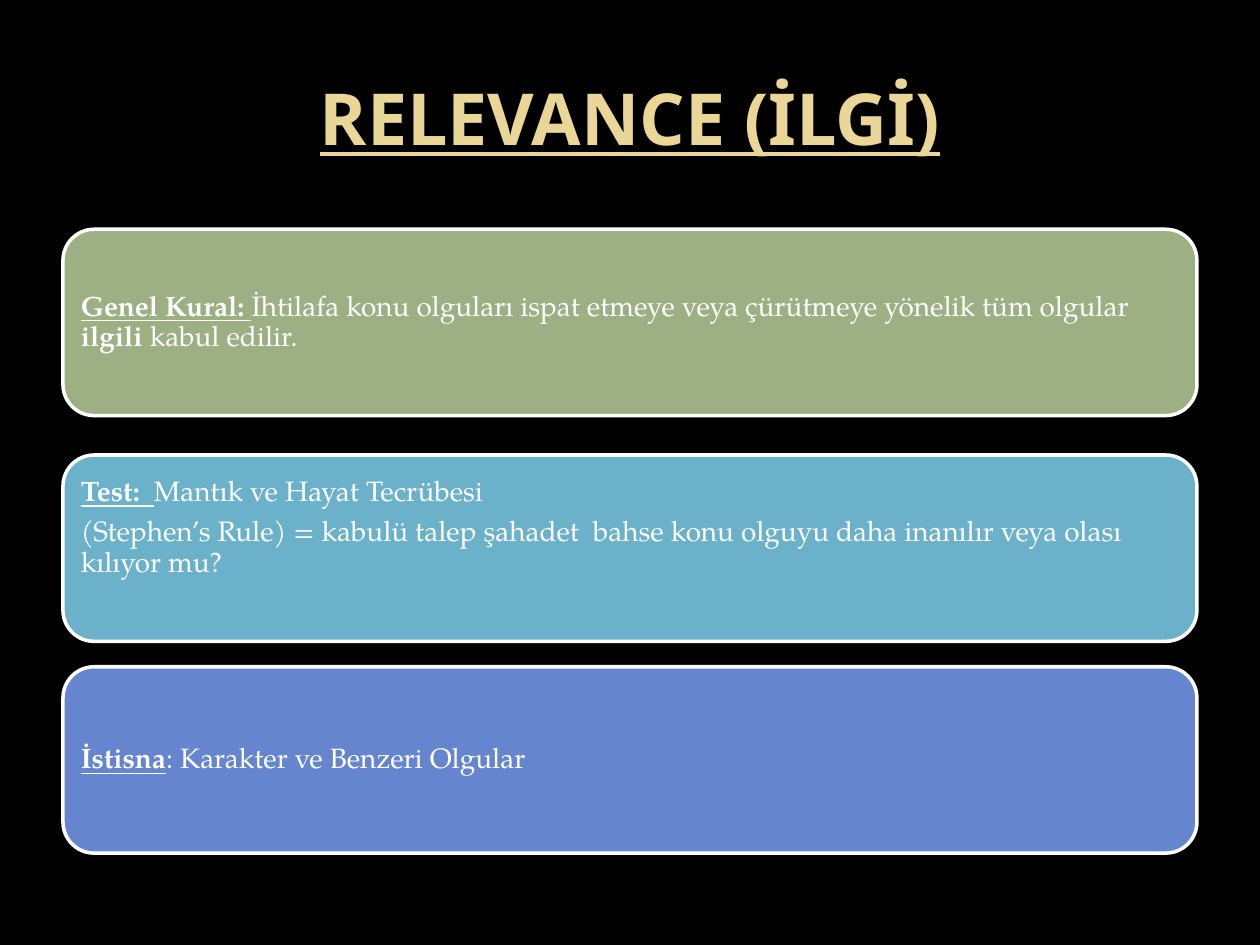
"""Build a slide with a title and three rounded rule boxes."""
from dataclasses import dataclass

from pptx import Presentation
from pptx.dml.color import RGBColor
from pptx.enum.shapes import MSO_SHAPE
from pptx.enum.text import MSO_ANCHOR, PP_ALIGN
from pptx.util import Pt

ROUND = MSO_SHAPE.ROUNDED_RECTANGLE
MIDDLE = MSO_ANCHOR.MIDDLE
LEFT, CENTER = PP_ALIGN.LEFT, PP_ALIGN.CENTER

BLACK = RGBColor(0x00, 0x00, 0x00)
WHITE = RGBColor(0xFF, 0xFF, 0xFF)
GOLD = RGBColor(0xEA, 0xD6, 0x96)
GREEN = RGBColor(0x9C, 0xB0, 0x84)
TEAL = RGBColor(0x6B, 0xB1, 0xC9)
BLUE = RGBColor(0x65, 0x85, 0xCF)

EDGE, WIDTH, HEIGHT = 36, 648, 106.5
INSET = 5


@dataclass
class Span:
    text: str
    bold: bool = False
    under: bool = False


@dataclass
class Box:
    top: float
    color: RGBColor
    lines: list[list[Span]]
    base: float = INSET


BOXES = [
    Box(131, GREEN, [[
        Span("Genel Kural: ", True, True),
        Span("İhtilafa konu olguları ispat etmeye veya çürütmeye yönelik tüm olgular"),
        Span(" ilgili ", True),
        Span("kabul edilir."),
    ]]),
    Box(260, TEAL, [
        [Span("Test:  ", True, True), Span("Mantık ve Hayat Tecrübesi")],
        [Span("(Stephen’s Rule) = kabulü talep şahadet  bahse konu olguyu "
              "daha inanılır veya olası kılıyor mu?")],
    ], base=28),
    Box(381, BLUE, [[
        Span("İstisna", True, True),
        Span(": Karakter ve Benzeri Olgular"),
    ]]),
]


def write(frame, lines: list[list[Span]], *, font: str, size: float,
          color: RGBColor, align=LEFT, pitch: float = 1, after: float = 0) -> None:
    frame.word_wrap = True
    frame.vertical_anchor = MIDDLE
    for i, spans in enumerate(lines):
        para = frame.add_paragraph() if i else frame.paragraphs[0]
        para.alignment = align
        para.line_spacing = pitch
        para.space_after = Pt(after)
        for span in spans:
            run = para.add_run()
            run.text = span.text
            run.font.name = font
            run.font.size = Pt(size)
            run.font.bold = span.bold
            run.font.underline = span.under
            run.font.color.rgb = color


def place(shape, top: float, height: float) -> None:
    shape.left, shape.top = Pt(EDGE), Pt(top)
    shape.width, shape.height = Pt(WIDTH), Pt(height)


def draw(slide, box: Box) -> None:
    shape = slide.shapes.add_shape(ROUND, 0, 0, 0, 0)
    place(shape, box.top, HEIGHT)
    shape.shadow.inherit = False
    shape.fill.solid()
    shape.fill.fore_color.rgb = box.color
    shape.line.color.rgb = WHITE
    shape.line.width = Pt(2)
    frame = shape.text_frame
    frame.margin_left = frame.margin_right = frame.margin_top = Pt(INSET)
    frame.margin_bottom = Pt(box.base)
    write(frame, box.lines, font="TeX Gyre Pagella", size=16,
          color=WHITE, pitch=0.9, after=5.6)


def main() -> None:
    deck = Presentation()
    deck.slide_width, deck.slide_height = Pt(720), Pt(540)
    slide = deck.slides.add_slide(deck.slide_layouts.get_by_name("Title Only"))
    slide.background.fill.solid()
    slide.background.fill.fore_color.rgb = BLACK
    title = slide.shapes.title
    place(title, 21.6, 90)
    write(title.text_frame, [[Span("RELEVANCE (İLGİ)", True, True)]],
          font="Noto Sans", size=41, color=GOLD, align=CENTER)
    for box in BOXES:
        draw(slide, box)
    deck.save("out.pptx")


if __name__ == "__main__":
    main()
